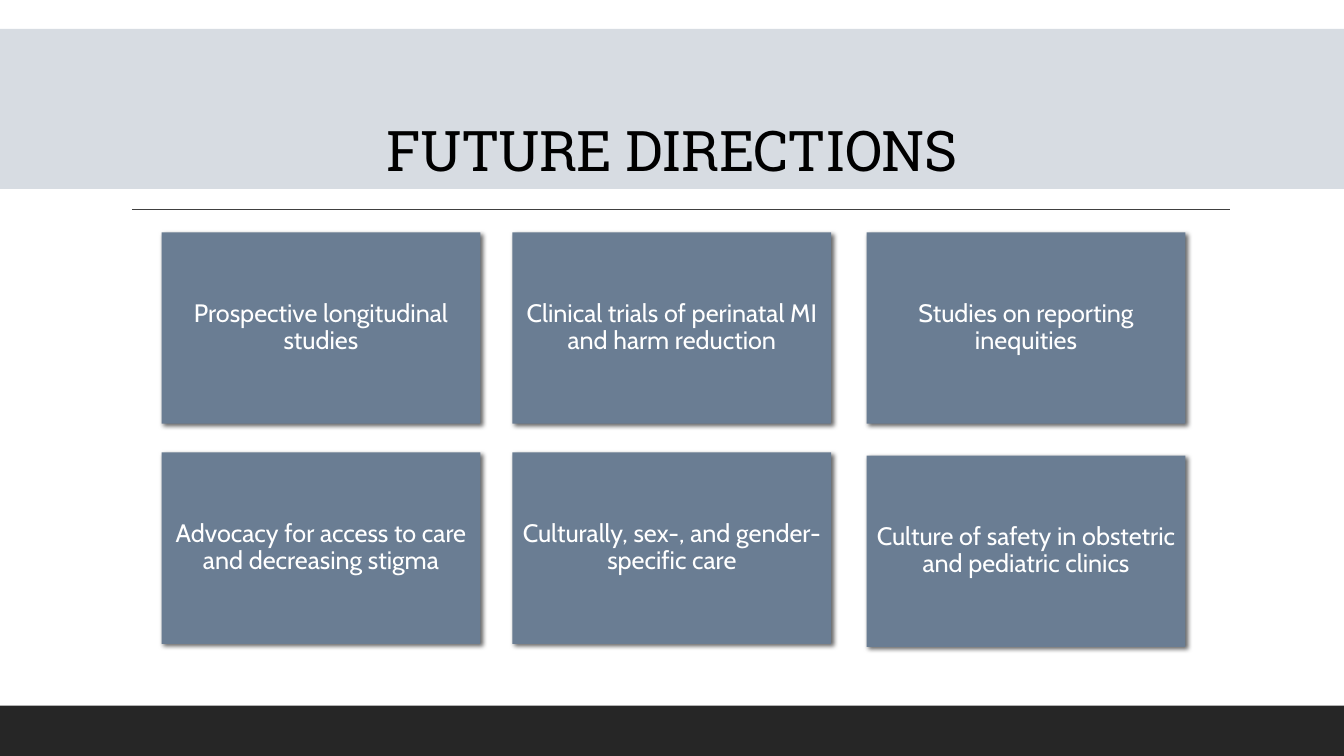
from dataclasses import dataclass
from pptx import Presentation
from pptx.dml.color import RGBColor
from pptx.enum.shapes import MSO_CONNECTOR, MSO_SHAPE
from pptx.enum.text import MSO_ANCHOR, MSO_AUTO_SIZE, PP_ALIGN
from pptx.oxml import parse_xml
from pptx.oxml.ns import nsdecls
from pptx.util import Pt


@dataclass(frozen=True)
class Theme:
    band: str = "D7DCE2"
    card: str = "6A7D93"
    footer: str = "262626"
    rule: str = "404040"
    title_text: str = "000000"
    card_text: str = "FFFFFF"
    title_font: str = "Roboto Slab"
    card_font: str = "Cabin"
    title_size: float = 40
    card_size: float = 18


class SlideBuilder:
    def __init__(self, page, theme):
        self.page = page
        self.theme = theme

    def fill(self, shape, color):
        shape.fill.solid()
        shape.fill.fore_color.rgb = RGBColor.from_string(color)

    def add_text(self, shape, text, font, size, color, anchor):
        frame = shape.text_frame
        frame.word_wrap = True
        frame.auto_size = MSO_AUTO_SIZE.NONE
        frame.vertical_anchor = anchor
        para = frame.paragraphs[0]
        para.alignment = PP_ALIGN.CENTER
        para.line_spacing = 0.9
        span = para.add_run()
        span.text = text
        span.font.name = font
        span.font.size = Pt(size)
        span.font.color.rgb = RGBColor.from_string(color)
        return para, span

    def title(self, text, left, top, width, height):
        theme = self.theme
        box = self.page.shapes.title
        box.left, box.top, box.width, box.height = map(Pt, (left, top, width, height))
        self.fill(box, theme.band)
        para, span = self.add_text(box, text, theme.title_font, theme.title_size,
                                   theme.title_text, MSO_ANCHOR.BOTTOM)
        span.font._element.set("spc", "-50")

    def block(self, color, left, top, width, height):
        box = self.page.shapes.add_shape(
            MSO_SHAPE.RECTANGLE, *map(Pt, (left, top, width, height)))
        self.fill(box, color)
        box.line.fill.background()
        box.shadow.inherit = False
        return box

    def card(self, text, left, top, width, height):
        theme = self.theme
        box = self.block(theme.card, left, top, width, height)
        effects = box._element.spPr.find(
            "{http://schemas.openxmlformats.org/drawingml/2006/main}effectLst")
        effects.append(parse_xml(
            f'<a:outerShdw {nsdecls("a")} blurRad="{Pt(3.5)}" dist="{Pt(2)}" '
            'dir="2700000" algn="tl" rotWithShape="0"><a:srgbClr val="000000">'
            '<a:alpha val="60000"/></a:srgbClr></a:outerShdw>'))
        frame = box.text_frame
        frame.margin_left = frame.margin_right = Pt(5)
        frame.margin_top = frame.margin_bottom = Pt(5)
        para, span = self.add_text(box, text, theme.card_font, theme.card_size,
                                   theme.card_text, MSO_ANCHOR.MIDDLE)
        para.space_after = Pt(6.3)

    def rule(self, left, right, top):
        line = self.page.shapes.add_connector(
            MSO_CONNECTOR.STRAIGHT, Pt(left), Pt(top), Pt(right), Pt(top))
        line.line.color.rgb = RGBColor.from_string(self.theme.rule)
        line.line.width = Pt(1)
        line._element.spPr.append(parse_xml(f'<a:effectLst {nsdecls("a")}/>'))


def main():
    deck = Presentation()
    deck.slide_width, deck.slide_height = Pt(960), Pt(540)
    page = deck.slides.add_slide(deck.slide_layouts[5])
    theme = Theme()
    builder = SlideBuilder(page, theme)

    builder.block(theme.footer, 0, 504, 960, 36)
    builder.rule(94.3, 878.6, 149.5)
    builder.title("FUTURE DIRECTIONS", 0, 20.7, 960, 114.3)

    column_lefts = (115.4, 366, 619)
    card_rows = (
        ((166, 166, 166), ("Prospective longitudinal studies",
                           "Clinical trials of perinatal MI and harm reduction",
                           "Studies on reporting inequities")),
        ((323.2, 323.2, 325.4), ("Advocacy for access to care and decreasing stigma",
                                 "Culturally, sex-, and gender-specific care",
                                 "Culture of safety in obstetric and pediatric clinics")),
    )
    for tops, texts in card_rows:
        for left, top, text in zip(column_lefts, tops, texts):
            builder.card(text, left, top, 227.8, 136.7)

    deck.save("out.pptx")


if __name__ == "__main__":
    main()
